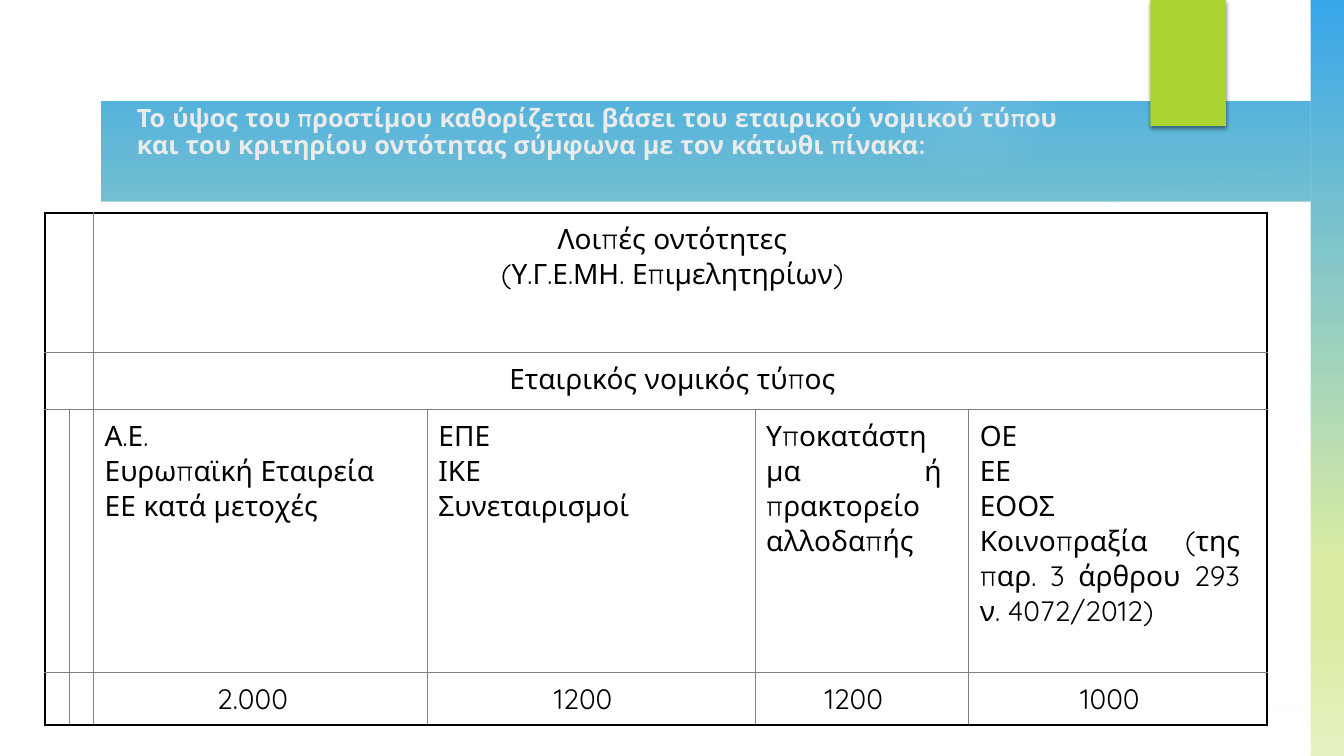
from lxml import etree
from pptx import Presentation
from pptx.dml.color import RGBColor
from pptx.enum.shapes import MSO_SHAPE
from pptx.enum.text import MSO_ANCHOR, PP_ALIGN
from pptx.oxml import parse_xml
from pptx.oxml.ns import nsdecls, qn
from pptx.util import Inches, Pt

INK = {"sky": "38A6E9", "lime": "DAECA3", "pale": "E6F2C2", "glow": "F7F7F7",
       "white": "FFFFFF", "green": "ACD433", "title": "EBEBEB",
       "black": "000000", "grey": "808080"}
FONT = "Quicksand"

deck = Presentation()
deck.slide_width, deck.slide_height = Inches(13.33), Inches(7.5)
slide = deck.slides.add_slide(deck.slide_layouts[6])


def blend(fill, node, stops, shade):
    """Give the fill under node a gradient of (place, colour, alpha) stops."""
    fill.solid()
    marks = "".join(
        f'<a:gs pos="{p * 1000}"><a:srgbClr val="{INK[c]}">'
        f'<a:alpha val="{a * 1000}"/></a:srgbClr></a:gs>' for p, c, a in stops)
    old = next(node.iter(qn("a:solidFill")))
    old.getparent().replace(old, parse_xml(
        f'<a:gradFill {nsdecls("a")} rotWithShape="1"><a:gsLst>{marks}</a:gsLst>'
        f'{shade}</a:gradFill>'))


def outline(*rings):
    """Draw a white freeform from closed rings of points in inches."""
    pen = slide.shapes.build_freeform(*rings[0][0], scale=Inches(1))
    for i, ring in enumerate(rings):
        if i:
            pen.move_to(*ring[0])
        pen.add_line_segments(ring[1:], close=True)
    shape = pen.convert_to_shape()
    shape.shadow.inherit = False
    shape.fill.solid()
    shape.fill.fore_color.rgb = RGBColor.from_string(INK["white"])
    shape.line.fill.background()
    return shape


# Background and soft glow
blend(slide.background.fill, slide.element.cSld,
      [(0, "sky", 100), (74, "lime", 100), (83, "lime", 100), (100, "pale", 100)],
      '<a:lin ang="5400000" scaled="0"/>')
glow = slide.shapes.add_shape(MSO_SHAPE.OVAL, Inches(8.75), Inches(0),
                              Inches(1.75), Inches(1.75))
glow.shadow.inherit = False
glow.line.fill.background()
blend(glow.fill, glow.element.spPr,
      [(0, "glow", 14), (36, "glow", 7), (73, "glow", 0)],
      '<a:path path="circle"><a:fillToRect l="50000" t="50000" r="50000" b="50000"/></a:path>')

# Tilted pale band
ends = [(9.34, 2.5), (9.95, 2.52), (12.03, 2.29), (12.89, 2.14)]
low = []
for k in range(13):
    t = k / 12
    ws = [(1 - t) ** 3, 3 * t * (1 - t) ** 2, 3 * t * t * (1 - t), t ** 3]
    low.append(tuple(sum(w * p[i] for w, p in zip(ws, ends)) for i in (0, 1)))
top = [(12.83, 1.66), (12.6, 1.74), (12.36, 1.81), (12.13, 1.88), (11.9, 1.94),
       (11.67, 2), (11.44, 2.06), (11.21, 2.11), (10.98, 2.16), (10.75, 2.21),
       (10.53, 2.25), (10.31, 2.29), (10.1, 2.32), (9.89, 2.35), (9.69, 2.38),
       (9.49, 2.41), (9.3, 2.43)]
band = outline(low + top)
band.rotation = 350.2
tint = next(band.element.spPr.iter(qn("a:srgbClr")))
etree.SubElement(tint, qn("a:alpha")).set("val", "20000")

# White panel with a curved top, and white frame
curve = [(12.84, 2.04), (12.28, 2.13), (11.72, 2.2), (11.16, 2.27), (10.6, 2.32),
         (10.04, 2.37), (9.49, 2.41), (8.94, 2.44), (8.4, 2.46), (7.86, 2.47),
         (7.34, 2.48), (6.82, 2.48), (6.32, 2.47), (5.83, 2.46), (5.35, 2.45),
         (4.88, 2.43), (4.44, 2.41), (4.01, 2.38), (3.6, 2.36), (3.21, 2.33),
         (2.83, 2.3), (2.49, 2.27), (2.16, 2.24), (1.87, 2.21), (1.59, 2.18),
         (1.35, 2.15), (1.13, 2.12), (0.94, 2.1), (0.79, 2.08), (0.58, 2.05)]
outline([(0.5, 2.04), (0.5, 7), (12.84, 7)] + curve)
outline([(0, 0), (0, 7.5), (13.33, 7.5), (13.33, 0)],
        [(12.81, 6.98), (0.52, 6.98), (0.52, 0.52), (12.81, 0.52)])

# Green tab
tab = slide.shapes.add_shape(MSO_SHAPE.RECTANGLE, Inches(11.41), Inches(0),
                             Inches(0.75), Inches(1.25))
tab.shadow.inherit = False
tab.fill.solid()
tab.fill.fore_color.rgb = RGBColor.from_string(INK["green"])
tab.line.fill.background()
tab.element.spPr.find(qn("a:effectLst")).append(parse_xml(
    f'<a:outerShdw {nsdecls("a")} blurRad="{Pt(3)}" dist="{Pt(2)}" dir="5400000" '
    f'rotWithShape="0"><a:srgbClr val="{INK["black"]}"><a:alpha val="45000"/>'
    '</a:srgbClr></a:outerShdw>'))

# Title
box = slide.shapes.add_textbox(Inches(1.26), Inches(0.93), Inches(9.58), Inches(0.77))
frame = box.text_frame
frame.word_wrap = True
frame.vertical_anchor = MSO_ANCHOR.MIDDLE
para = frame.paragraphs[0]
para.line_spacing = 0.9
run = para.add_run()
run.text = ("Το ύψος του προστίμου καθορίζεται βάσει του εταιρικού νομικού τύπου "
            "και του κριτηρίου οντότητας σύμφωνα με τον κάτωθι πίνακα:")
run.font.size, run.font.name, run.font.bold = Pt(18), FONT, True
run.font.color.rgb = RGBColor.from_string(INK["title"])

# Table of fines
wide = [0.18, 0.18, 3.31, 3.25, 2.12, 2.96]
high = [1.39, 0.56, 2.61, 0.52]
rows = [
    [["Λοιπές οντότητες", "(Υ.Γ.Ε.ΜΗ. Επιμελητηρίων)"]],
    [["Εταιρικός νομικός τύπος"]],
    [["Α.Ε.", "Ευρωπαϊκή Εταιρεία", "ΕΕ κατά μετοχές"],
     ["ΕΠΕ", "ΙΚΕ", "Συνεταιρισμοί"],
     ["Υποκατάστημα ή πρακτορείο αλλοδαπής"],
     ["ΟΕ", "ΕΕ", "ΕΟΟΣ", "Κοινοπραξία (της παρ. 3 άρθρου 293 ν. 4072/2012)"]],
    [["2.000"], ["1200"], ["1200"], ["1000"]],
]
grid = slide.shapes.add_table(4, 6, Inches(0.45), Inches(2.11),
                              Inches(sum(wide)), Inches(sum(high))).table
grid.first_row = grid.horz_banding = False
for col, w in zip(grid.columns, wide):
    col.width = Inches(w)
for row, h in zip(grid.rows, high):
    row.height = Inches(h)
for r in (0, 1):
    grid.cell(r, 0).merge(grid.cell(r, 1))
    grid.cell(r, 2).merge(grid.cell(r, 5))

# Cell fills and borders: black outside, grey inside
for r in range(4):
    for c in range(6):
        cell = grid.cell(r, c)
        cell.fill.solid()
        cell.fill.fore_color.rgb = RGBColor.from_string(INK["white"])
        sides = {"L": c == 0, "R": c == 5 or (r < 2 and c == 2),
                 "T": r == 0, "B": r == 3}
        for i, (side, edge) in enumerate(sides.items()):
            hue, size = ("black", 1.5) if edge else ("grey", 0.5)
            cell._tc.tcPr.insert(i, parse_xml(
                f'<a:ln{side} {nsdecls("a")} w="{Pt(size)}"><a:solidFill>'
                f'<a:srgbClr val="{INK[hue]}"/></a:solidFill></a:ln{side}>'))

# Cell text
for r, row in enumerate(rows):
    for c, lines in enumerate(row, 2):
        cell = grid.cell(r, c)
        cell.margin_left, cell.margin_right = Inches(0.11), Inches(0.27)
        cell.margin_top = cell.margin_bottom = Inches(0.09)
        for i, line in enumerate(lines):
            frame = cell.text_frame
            para = frame.add_paragraph() if i else frame.paragraphs[0]
            para.alignment = PP_ALIGN.JUSTIFY if r == 2 else PP_ALIGN.CENTER
            run = para.add_run()
            run.text = line
            run.font.size, run.font.name = Pt(20), FONT
            run.font.color.rgb = RGBColor.from_string(INK["black"])

deck.save("out.pptx")
